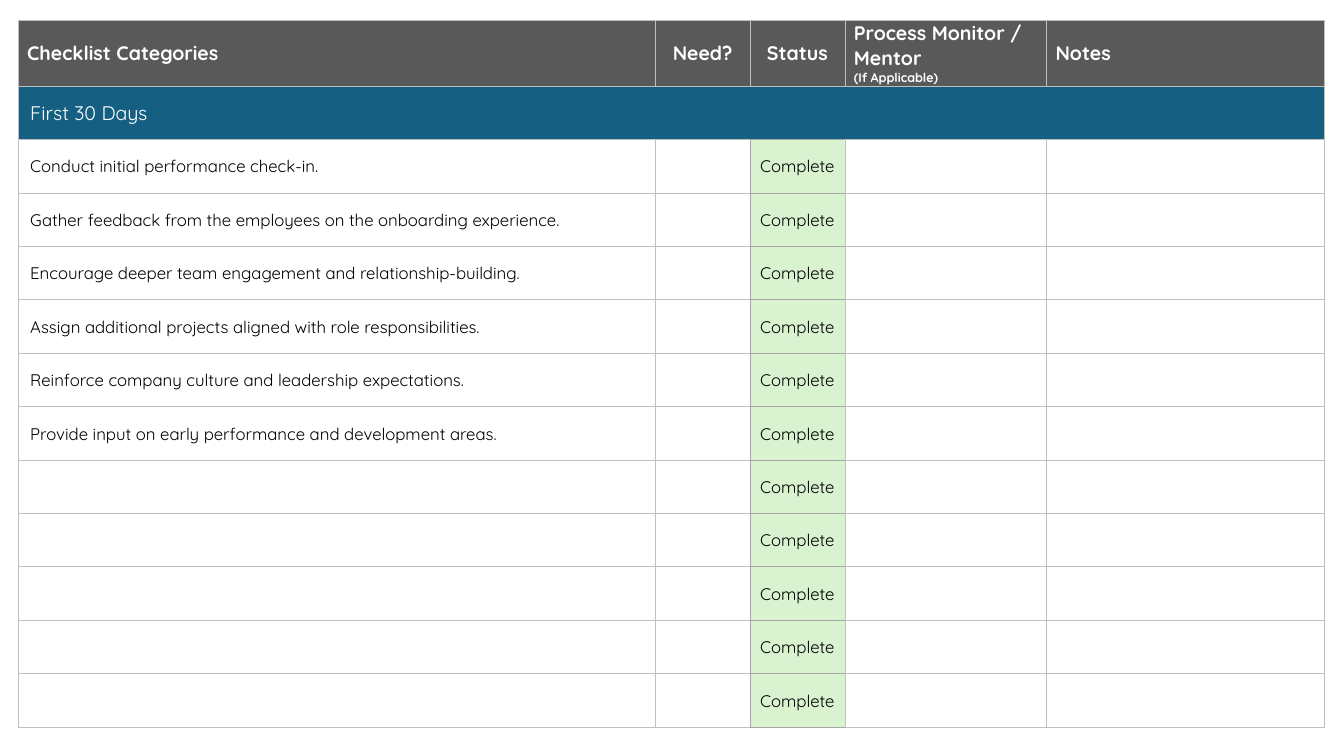
from lxml.etree import SubElement
from pptx import Presentation
from pptx.dml.color import RGBColor
from pptx.enum.text import MSO_ANCHOR, PP_ALIGN
from pptx.oxml.ns import qn
from pptx.util import Inches, Pt

FONT = "Quicksand"
HEADINGS = ["Checklist Categories", "Need?", "Status",
            "Process Monitor / Mentor \v(If Applicable)", "Notes"]
TASKS = [
    "Conduct initial performance check-in.",
    "Gather feedback from the employees on the onboarding experience.",
    "Encourage deeper team engagement and relationship-building.",
    "Assign additional projects aligned with role responsibilities.",
    "Reinforce company culture and leadership expectations.",
    "Provide input on early performance and development areas.",
] + [""] * 5
COLUMN_WIDTHS = [6.32, 0.94, 0.94, 2, 2.76]
ROW_HEIGHT = 0.53
NEED, STATUS = 1, 2


def style_cell(cell, fill, borders):
    properties = cell._tc.get_or_add_tcPr()
    for side, color in zip("LRTB", borders):
        line = SubElement(properties, qn(f"a:ln{side}"), w=str(Pt(0.5)))
        SubElement(SubElement(line, qn("a:solidFill")), qn("a:srgbClr"), val=color)
    cell.fill.solid()
    cell.fill.fore_color.rgb = RGBColor.from_string(fill)


def write_cell(cell, text, size, color, bold=False, indent=0.01, centered=False):
    cell.vertical_anchor = MSO_ANCHOR.MIDDLE
    cell.margin_left = Inches(indent)
    cell.margin_right = cell.margin_top = Inches(0.01)
    cell.margin_bottom = 0
    paragraph = cell.text_frame.paragraphs[0]
    paragraph.text = text
    paragraph.alignment = PP_ALIGN.CENTER if centered else PP_ALIGN.LEFT
    for line_break in paragraph._p.findall(qn("a:br")):
        SubElement(line_break, qn("a:rPr"), sz=str(size * 100))
    for run in paragraph.runs:
        run.font.name = FONT
        run.font.size = Pt(size)
        run.font.bold = bold
        run.font.color.rgb = RGBColor.from_string(color)


prs = Presentation()
prs.slide_width, prs.slide_height = Inches(13.33), Inches(7.5)
slide = prs.slides.add_slide(prs.slide_layouts[6])

checklist = slide.shapes.add_table(
    len(TASKS) + 2, len(HEADINGS),
    Inches(0.18), Inches(0.2), Inches(12.97), Inches(7.01)).table
for column, width in zip(checklist.columns, COLUMN_WIDTHS):
    column.width = Inches(width)
for row in checklist.rows:
    row.height = Inches(ROW_HEIGHT)

for row_index, row in enumerate(checklist.rows):
    for column_index, cell in enumerate(row.cells):
        fill = {0: "595959", 1: "156082"}.get(row_index, "FFFFFF")
        borders = ["BFBFBF"] * 4
        if row_index > 1 and column_index == NEED:
            borders[1] = "A6A6A6"
        if row_index > 1 and column_index == STATUS:
            fill = "D9F2D0"
            borders = ["A6A6A6", "BFBFBF", "A6A6A6", "A6A6A6"]
        style_cell(cell, fill, borders)

for column_index, heading in enumerate(HEADINGS):
    centered = column_index in (NEED, STATUS)
    write_cell(checklist.cell(0, column_index), heading, 14, "FFFFFF", bold=True,
               indent=0.01 if centered else 0.09, centered=centered)
mentor_note = checklist.cell(0, 3).text_frame.paragraphs[0].runs[-1]
mentor_note.font.size = Pt(9)

period = checklist.cell(1, 0)
period.merge(checklist.cell(1, len(HEADINGS) - 1))
write_cell(period, "First 30 Days", 14, "FFFFFF", indent=0.12)

for row_index, task in enumerate(TASKS, start=2):
    if task:
        write_cell(checklist.cell(row_index, 0), task, 12, "000000", indent=0.12)
    write_cell(checklist.cell(row_index, STATUS), "Complete", 12, "000000", centered=True)

prs.save("out.pptx")
